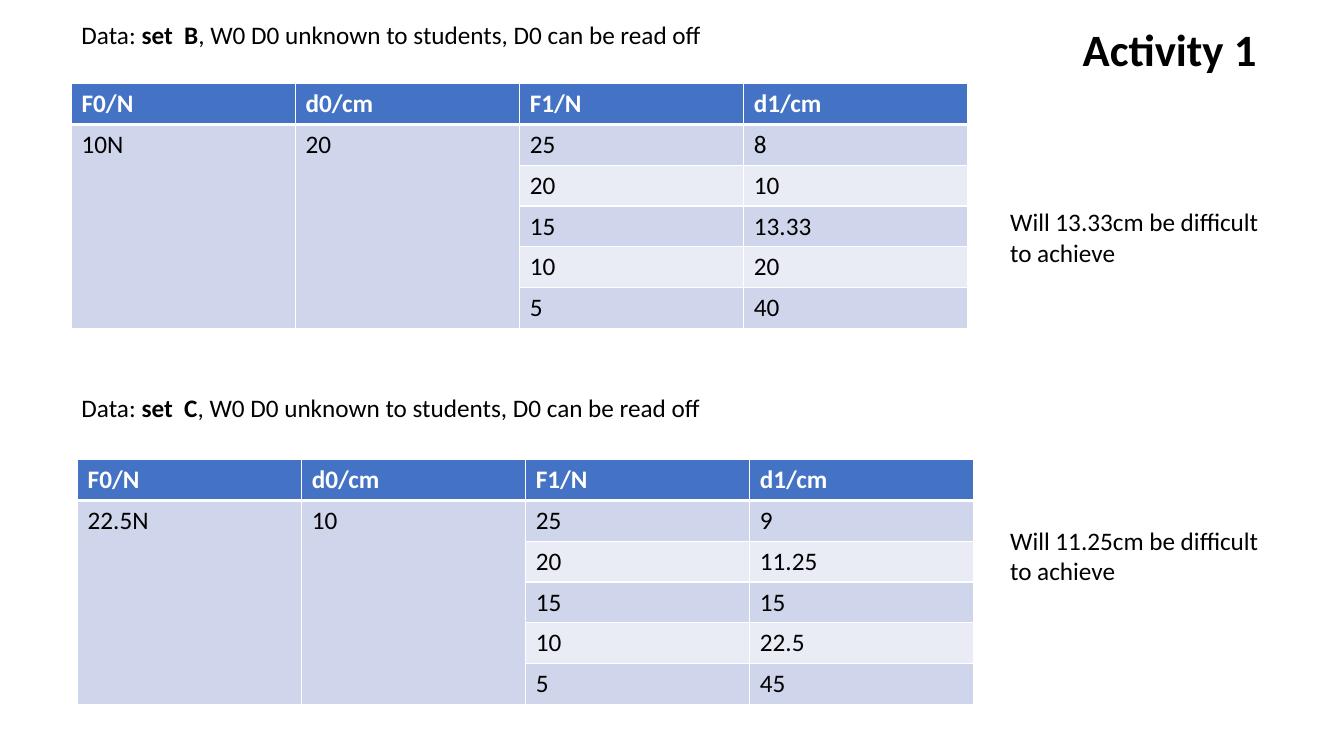
from lxml import etree
from pptx import Presentation
from pptx.dml.color import RGBColor
from pptx.enum.text import MSO_AUTO_SIZE
from pptx.oxml.ns import qn
from pptx.util import Pt

PX = 9144  # EMU, 100 px to the inch
FIT_SHAPE = MSO_AUTO_SIZE.SHAPE_TO_FIT_TEXT

BLACK = RGBColor(0x00, 0x00, 0x00)
WHITE = RGBColor(0xFF, 0xFF, 0xFF)
HEADER_BLUE = RGBColor(0x44, 0x72, 0xC4)
BAND_DARK = RGBColor(0xCF, 0xD5, 0xEA)
BAND_LIGHT = RGBColor(0xE9, 0xEB, 0xF5)

HEADERS = ("F0/N", "d0/cm", "F1/N", "d1/cm")
FORCES = ("25", "20", "15", "10", "5")


def px(*lengths):
    return [round(length * PX) for length in lengths]


def add_run(paragraph, text, *, size=18, color=BLACK, bold=False):
    run = paragraph.add_run()
    run.text = text
    run.font.name = "Calibri"
    run.font.size = Pt(size)
    run.font.color.rgb = color
    run.font.bold = bold


def add_label(slide, box, runs, **text_format):
    """Place a text box holding one paragraph of (text, bold) runs."""
    frame = slide.shapes.add_textbox(*px(*box)).text_frame
    frame.word_wrap = True
    frame.auto_size = FIT_SHAPE
    for text, bold in runs:
        add_run(frame.paragraphs[0], text, bold=bold, **text_format)


def set_borders(cell, top, bottom):
    """Draw white cell borders; top and bottom widths are in points."""
    properties = cell._tc.get_or_add_tcPr()
    widths = {"lnL": 1, "lnR": 1, "lnT": top, "lnB": bottom}
    for position, (side, width) in enumerate(widths.items()):
        line = etree.Element(qn(f"a:{side}"), w=str(Pt(width)))
        fill = etree.SubElement(line, qn("a:solidFill"))
        etree.SubElement(fill, qn("a:srgbClr"), val=str(WHITE))
        properties.insert(position, line)


def add_readings_table(slide, box, start_force, start_distance, distances):
    rows = [HEADERS, (start_force, start_distance, FORCES[0], distances[0])]
    rows += [("", "", *pair) for pair in zip(FORCES[1:], distances[1:])]
    left, top, width, height = box
    table = slide.shapes.add_table(len(rows), len(HEADERS), *px(*box)).table
    for column in table.columns:
        column.width = px(width / len(HEADERS))[0]
    for row in table.rows:
        row.height = px(height / len(rows))[0]
    for column in (0, 1):
        table.cell(1, column).merge(table.cell(len(rows) - 1, column))

    for r, row in enumerate(rows):
        is_header = r == 0
        band = BAND_DARK if r % 2 else BAND_LIGHT
        for c, text in enumerate(row):
            cell = table.cell(r, c)
            cell.fill.solid()
            cell.fill.fore_color.rgb = HEADER_BLUE if is_header else band
            set_borders(cell, top=3 if r == 1 else 1, bottom=3 if is_header else 1)
            if text:
                add_run(cell.text_frame.paragraphs[0], text, bold=is_header,
                        color=WHITE if is_header else BLACK)


def add_data_set(slide, box, name, table_offset, note_top, hard_distance, **readings):
    """Place a caption, its table and the note to the right of the table."""
    left, top, width, height = box
    caption = [("Data: ", False), (f"set  {name}", True),
               (", W0 D0 unknown to students, D0 can be read off", False)]
    add_label(slide, (left, top, 645, 40), caption)
    table_left, table_top = table_offset
    add_readings_table(
        slide, (left + table_left, top + table_top, 889, height - table_top), **readings)
    note = f"Will {hard_distance}cm be difficult to achieve"
    add_label(slide, (left + width - 285, top + note_top, 285, 71), [(note, False)])


def build_activity_slide(presentation):
    slide = presentation.slides.add_slide(presentation.slide_layouts[6])
    add_data_set(slide, (71, 14, 1206, 312), "B", (0, 69), 186, "13.33",
                 start_force="10N", start_distance="20",
                 distances=("8", "10", "13.33", "20", "40"))
    add_data_set(slide, (71, 384, 1206, 315), "C", (6, 72), 132, "11.25",
                 start_force="22.5N", start_distance="10",
                 distances=("9", "11.25", "15", "22.5", "45"))
    add_label(slide, (1064, 17, 214, 64), [("Activity 1", True)], size=32)


def main():
    presentation = Presentation()
    presentation.slide_width, presentation.slide_height = px(1333, 750)
    build_activity_slide(presentation)
    presentation.save("out.pptx")


if __name__ == "__main__":
    main()
